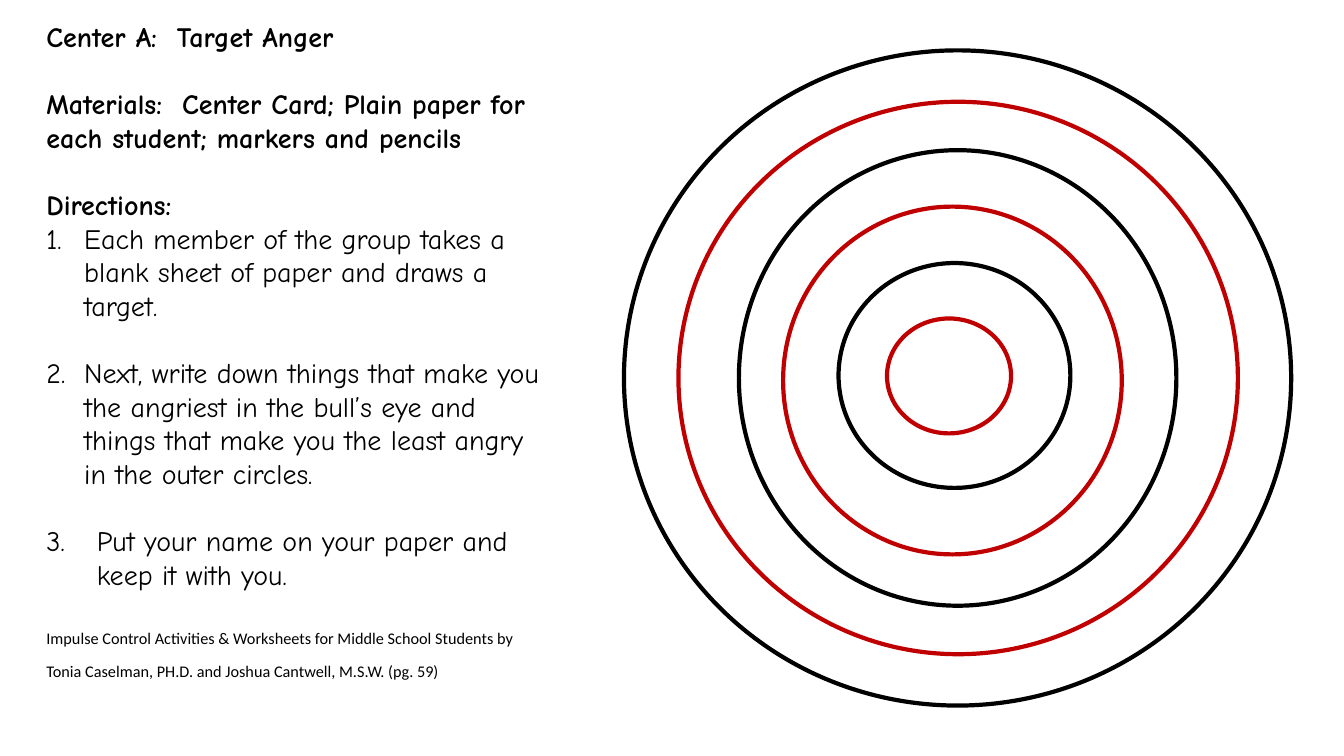
import pptx
import pptx.util
import pptx.dml.color
import pptx.enum.shapes
import pptx.enum.text
import lxml.etree

Pt = pptx.util.Pt
HUES = {"black": "000000", "red": "C00000", "white": "FFFFFF"}


def hue(name):
    return pptx.dml.color.RGBColor.from_string(HUES[name])


def style(para, bold, font, gap):
    para.alignment = pptx.enum.text.PP_ALIGN.LEFT
    para.line_spacing = 1.0
    para.space_before = Pt(gap)
    para.space_after = Pt(0)
    for run in para.runs:
        run.font.name = font
        run.font.size = Pt(20)
        run.font.bold = bold
        run.font.color.rgb = hue("black")


deck = pptx.Presentation()
deck.slide_width = Pt(960)
deck.slide_height = Pt(540)
slide = deck.slides.add_slide(deck.slide_layouts[1])
title = slide.shapes.title
body = slide.placeholders[1]

for box, top, height in [(title, 10.4, 31.2), (body, 58.4, 481.6)]:
    box.left, box.top = Pt(25.9), Pt(top)
    box.width, box.height = Pt(370.1), Pt(height)
    frame = box.text_frame
    frame.word_wrap = True
    frame.auto_size = pptx.enum.text.MSO_AUTO_SIZE.NONE
    frame.vertical_anchor = pptx.enum.text.MSO_ANCHOR.TOP

title.text_frame.text = "Center A:  Target Anger"
style(title.text_frame.paragraphs[0], True, "Comic Neue", 0)

lines = [
    ("Materials:  Center Card; Plain paper for each student; markers and pencils", True, 0, 0),
    ("Directions:", True, 0, 0),
    ("Each member of the group takes a blank sheet of paper and draws a target.", False, 1, 27),
    ("Next, write down things that make you the angriest in the bull’s eye and "
     "things that make you the least angry in the outer circles.", False, 2, 27),
    ("Put your name on your paper and keep it with you.", False, 3, 36),
    ("Impulse Control Activities & Worksheets for Middle School Students by "
     "Tonia Caselman, PH.D. and Joshua Cantwell, M.S.W. (pg. 59)", False, 0, 0),
]
body.text_frame.text = "\n".join(line[0] for line in lines)
for para, (text, bold, step, indent) in zip(body.text_frame.paragraphs, lines):
    source = text == lines[-1][0]
    style(para, bold, "Calibri" if source else "Comic Neue", 0 if step == 1 else 24)
    props = para._p.get_or_add_pPr()
    props.set("marL", str(Pt(indent)))
    props.set("indent", str(-Pt(indent)))
    tag = "buAutoNum" if step else "buNone"
    mark = lxml.etree.SubElement(props, "{http://schemas.openxmlformats.org/drawingml/2006/main}" + tag)
    if step:
        mark.set("type", "arabicPeriod")
        mark.set("startAt", str(step))
    if source:
        para.runs[0].font._element.set("baseline", "30000")

rings = [
    (445.7, 36, 476.6, 468),
    (484.6, 72.7, 399.6, 394.6),
    (527.8, 107.3, 312.5, 325.4),
    (559.4, 147.6, 241.9, 248.4),
    (599, 187.9, 165.6, 160.6),
    (633.6, 227.5, 88.6, 82.1),
]
for rank, spot in enumerate(rings):
    ring = slide.shapes.add_shape(pptx.enum.shapes.MSO_SHAPE.OVAL, *map(Pt, spot))
    ring.shadow.inherit = False
    ring.fill.solid()
    ring.fill.fore_color.rgb = hue("white")
    ring.line.color.rgb = hue("red" if rank % 2 else "black")
    ring.line.width = Pt(3)
ring.fill.background()

deck.save("out.pptx")
